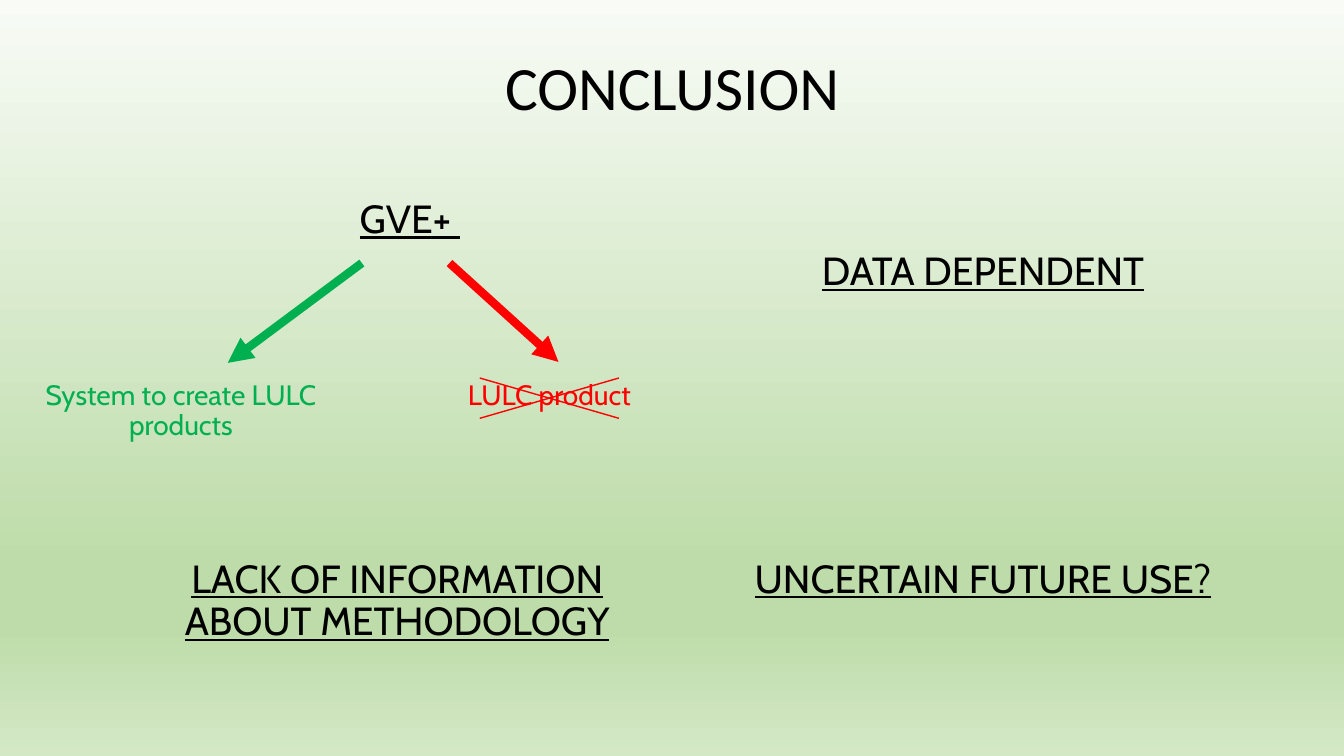
from dataclasses import dataclass

import pptx
import pptx.dml.color
import pptx.enum.shapes
import pptx.enum.text
import pptx.oxml
import pptx.oxml.ns
import pptx.shapes.connector
import pptx.slide
import pptx.text.text
import pptx.util
from lxml import etree

Pt = pptx.util.Pt
qn = pptx.oxml.ns.qn
CENTER = pptx.enum.text.PP_ALIGN.CENTER
LEFT = pptx.enum.text.PP_ALIGN.LEFT


@dataclass(frozen=True)
class Theme:
    black: str = "000000"
    green: str = "00B050"
    red: str = "FF0000"
    background: tuple[tuple[int, str], ...] = (
        (0, "F8FBF6"), (74, "BEDCAA"), (83, "BEDCAA"), (100, "D4E8C6"))
    title_font: str = "Calibri"
    body_font: str = "Cabin"
    title_size: float = 44
    heading_size: float = 28
    detail_size: float = 20
    arrow_width: float = 6
    cross_width: float = 1


THEME = Theme()


@dataclass(frozen=True)
class Label:
    text: str
    left: float
    top: float
    width: float
    height: float
    size: float = THEME.heading_size
    color: str = THEME.black
    underline: bool = True
    alignment: pptx.enum.text.PP_ALIGN = CENTER


@dataclass(frozen=True)
class Line:
    start: tuple[float, float]
    end: tuple[float, float]
    color: str
    width: float
    arrowhead: bool = False


TITLE = Label("CONCLUSION", 45.4, 12.2, 869.8, 104.4,
              THEME.title_size, underline=False)

DETAIL_TOP = 268.6
LOWER_TOP = 396
LABELS = (
    Label("GVE+ ", 249.8, 139, 100.8, 54, alignment=LEFT),
    Label("System to create LULC products", 6.5, DETAIL_TOP, 245.5, 59.8,
          THEME.detail_size, THEME.green, False),
    Label("LULC product", 321.1, DETAIL_TOP, 142.6, 51.8,
          THEME.detail_size, THEME.red, False),
    Label("DATA DEPENDENT", 560.9, 176.4, 282.2, 54),
    Label("LACK OF INFORMATION ABOUT METHODOLOGY", 103.7, LOWER_TOP, 360, 111.6),
    Label("UNCERTAIN FUTURE USE?", 522, LOWER_TOP, 360, 54),
)

CROSS_LEFT, CROSS_TOP, CROSS_RIGHT, CROSS_BOTTOM = 342.7, 270, 442.1, 298.8
LINES = (
    Line((258.5, 187.9), (162.7, 259.2), THEME.green, THEME.arrow_width, True),
    Line((321.1, 187.9), (398.9, 258.5), THEME.red, THEME.arrow_width, True),
    Line((CROSS_LEFT, CROSS_BOTTOM), (CROSS_RIGHT, CROSS_TOP),
         THEME.red, THEME.cross_width),
    Line((CROSS_RIGHT, CROSS_BOTTOM), (CROSS_LEFT, CROSS_TOP),
         THEME.red, THEME.cross_width),
)


def rgb(color: str) -> pptx.dml.color.RGBColor:
    return pptx.dml.color.RGBColor.from_string(color)


def paint_background(slide: pptx.slide.Slide) -> None:
    fill = slide.background.fill
    fill.gradient()
    fill.gradient_angle = 270
    stops = slide.element.find(".//" + qn("a:gsLst"))
    for stop in list(stops):
        stops.remove(stop)
    for percent, color in THEME.background:
        stop = etree.SubElement(stops, qn("a:gs"), pos=str(percent * 1000))
        etree.SubElement(stop, qn("a:srgbClr"), val=color)


def write_text(frame: pptx.text.text.TextFrame, label: Label, font: str,
               space_before: float) -> None:
    frame.word_wrap = True
    frame.auto_size = pptx.enum.text.MSO_AUTO_SIZE.NONE
    paragraph = frame.paragraphs[0]
    paragraph.alignment = label.alignment
    paragraph.line_spacing = 0.9
    paragraph.space_before = Pt(space_before)
    run = paragraph.add_run()
    run.text = label.text
    run.font.name = font
    run.font.size = Pt(label.size)
    run.font.underline = label.underline
    run.font.color.rgb = rgb(label.color)


def set_title(slide: pptx.slide.Slide, label: Label) -> None:
    title = slide.shapes.title
    title.left, title.top = Pt(label.left), Pt(label.top)
    title.width, title.height = Pt(label.width), Pt(label.height)
    title.text_frame.vertical_anchor = pptx.enum.text.MSO_ANCHOR.MIDDLE
    write_text(title.text_frame, label, THEME.title_font, 0)


def add_label(slide: pptx.slide.Slide, label: Label) -> None:
    shape = slide.shapes.add_textbox(
        Pt(label.left), Pt(label.top), Pt(label.width), Pt(label.height))
    write_text(shape.text_frame, label, THEME.body_font, 10)


def add_line(slide: pptx.slide.Slide, line: Line) -> None:
    connector = slide.shapes.add_connector(
        pptx.enum.shapes.MSO_CONNECTOR.STRAIGHT,
        Pt(line.start[0]), Pt(line.start[1]), Pt(line.end[0]), Pt(line.end[1]))
    connector.line.color.rgb = rgb(line.color)
    connector.line.width = Pt(line.width)
    properties = connector.element.spPr
    if line.arrowhead:
        etree.SubElement(properties.find(qn("a:ln")), qn("a:tailEnd"),
                         type="triangle")
    etree.SubElement(properties, qn("a:effectLst"))


def main() -> None:
    presentation = pptx.Presentation()
    presentation.slide_width, presentation.slide_height = Pt(960), Pt(540)
    title_only = presentation.slide_layouts.get_by_name("Title Only")
    slide = presentation.slides.add_slide(title_only)

    # Background and title
    paint_background(slide)
    set_title(slide, TITLE)

    # Conclusions, then the arrows and the cross over them
    for label in LABELS:
        add_label(slide, label)
    for line in LINES:
        add_line(slide, line)

    presentation.save("out.pptx")


if __name__ == "__main__":
    main()
